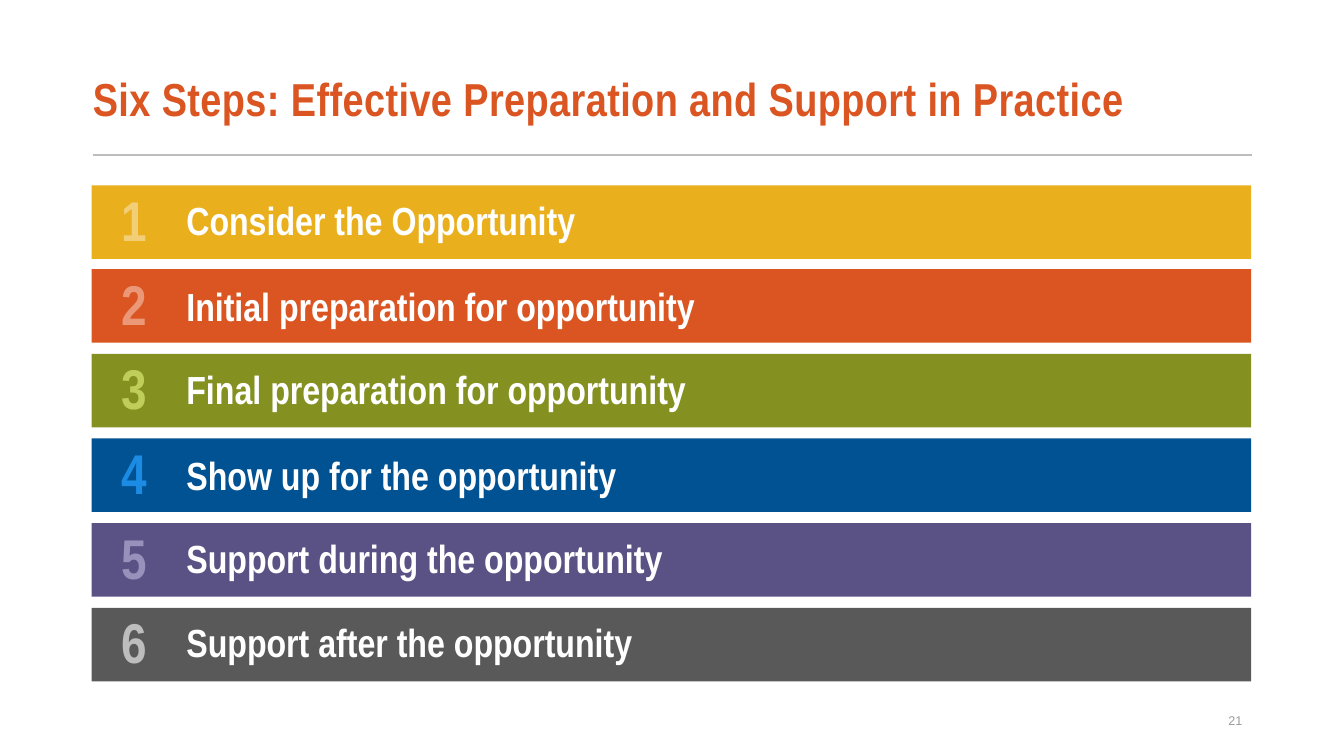
"""Build a slide listing six steps as numbered colour bars."""
from dataclasses import dataclass

import lxml.etree
import pptx
import pptx.dml.color
import pptx.enum.shapes
import pptx.enum.text
import pptx.oxml.ns
import pptx.util

PX = 9144
LEFT, WIDTH = 91, 1150
BAR_TOP, BAR_HEIGHT, BAR_SPAN = 184, 73, 419
NUMBER_WIDTH = 84
LABEL_LEFT, LABEL_WIDTH, LABEL_HEIGHT = 175, 708, 55
ALIGN = pptx.enum.text.PP_ALIGN
ANCHOR = pptx.enum.text.MSO_ANCHOR


@dataclass(frozen=True)
class Step:
    """One numbered bar."""
    label: str
    fill: str
    number_color: str
    label_offset: int
    number_opacity: int = 100
    label_spacing: float = 0.95


STEPS = [
    Step("Consider the Opportunity", "E9AF1D", "F2CF77", 9),
    Step("Initial preparation for opportunity", "DA5521", "EB9878", 12),
    Step("Final preparation for opportunity", "849120", "CFDE69", 10, number_opacity=79),
    Step("Show up for the opportunity", "005293", "259FFF", 8, number_opacity=75, label_spacing=1.0),
    Step("Support during the opportunity", "5A5284", "9891BB", 10),
    Step("Support after the opportunity", "595959", "BDBDBD", 9),
]


def px(value: int) -> pptx.util.Emu:
    """Turn px into EMU."""
    return pptx.util.Emu(value * PX)


def color(value: str) -> pptx.dml.color.RGBColor:
    """Turn a hex string into a colour."""
    return pptx.dml.color.RGBColor.from_string(value)


def write(box, text: str, size: int, tint: str, font: str = "Arial Narrow", bold: bool = True,
          align=ALIGN.LEFT, anchor=ANCHOR.TOP, spacing: float = 1.0):
    """Put one formatted line of text in a box and return its run."""
    frame = box.text_frame
    frame.text = text
    frame.word_wrap = True
    frame.vertical_anchor = anchor
    para = frame.paragraphs[0]
    para.alignment = align
    para.line_spacing = spacing
    span = para.runs[0]
    span.font.name = font
    span.font.size = pptx.util.Pt(size)
    span.font.bold = bold
    span.font.color.rgb = color(tint)
    return span


def add_text(page, left: int, top: int, width: int, height: int, text: str, size: int, tint: str, **style):
    """Add a text box and return its run."""
    box = page.shapes.add_textbox(px(left), px(top), px(width), px(height))
    return write(box, text, size, tint, **style)


def set_opacity(span, percent: int) -> None:
    """Make the text of a run partly transparent."""
    tint = span.font.fill._xPr.find(".//" + pptx.oxml.ns.qn("a:srgbClr"))
    lxml.etree.SubElement(tint, pptx.oxml.ns.qn("a:alpha"), val=str(percent * 1000))


def add_title(page) -> None:
    """Fill the title placeholder and draw the rule below it."""
    title = page.shapes.title
    title.left, title.top, title.width, title.height = px(92), px(54), px(WIDTH), px(95)
    span = write(title, "Six Steps: Effective Preparation and Support in Practice", 33, "DA5521",
                 anchor=ANCHOR.MIDDLE, spacing=0.87)
    title.text_frame.margin_left = 0
    title.text_frame.auto_size = pptx.enum.text.MSO_AUTO_SIZE.NONE
    span.font._element.set("spc", "30")
    rule = page.shapes.add_connector(pptx.enum.shapes.MSO_CONNECTOR.STRAIGHT,
                                     px(92), px(154), px(92 + WIDTH), px(154))
    rule.line.color.rgb = color("BDBDBD")
    rule.line.width = pptx.util.Pt(1.5)
    lxml.etree.SubElement(rule._element.spPr, pptx.oxml.ns.qn("a:effectLst"))


def add_step(page, index: int, step: Step) -> None:
    """Draw one bar with its number and label."""
    top = BAR_TOP + index * BAR_SPAN // (len(STEPS) - 1)
    bar = page.shapes.add_shape(pptx.enum.shapes.MSO_SHAPE.RECTANGLE,
                                px(LEFT), px(top), px(WIDTH), px(BAR_HEIGHT))
    bar.shadow.inherit = False
    bar.fill.solid()
    bar.fill.fore_color.rgb = color(step.fill)
    bar.line.fill.background()
    number = add_text(page, LEFT, top, NUMBER_WIDTH, BAR_HEIGHT, str(index + 1), 40, step.number_color,
                      align=ALIGN.CENTER, anchor=ANCHOR.MIDDLE, spacing=0.95)
    if step.number_opacity < 100:
        set_opacity(number, step.number_opacity)
    add_text(page, LABEL_LEFT, top + step.label_offset, LABEL_WIDTH, LABEL_HEIGHT,
             step.label, 28, "FFFFFF", spacing=step.label_spacing)


def main() -> None:
    """Build and save the deck."""
    deck = pptx.Presentation()
    deck.slide_width, deck.slide_height = px(1333), px(750)
    page = deck.slides.add_slide(deck.slide_layouts[5])
    add_title(page)
    for index, step in enumerate(STEPS):
        add_step(page, index, step)
    add_text(page, 942, 695, 300, 40, "21", 9, "9B9B9B", font="Arial", bold=False,
             align=ALIGN.RIGHT, anchor=ANCHOR.MIDDLE)
    deck.save("out.pptx")


if __name__ == "__main__":
    main()
